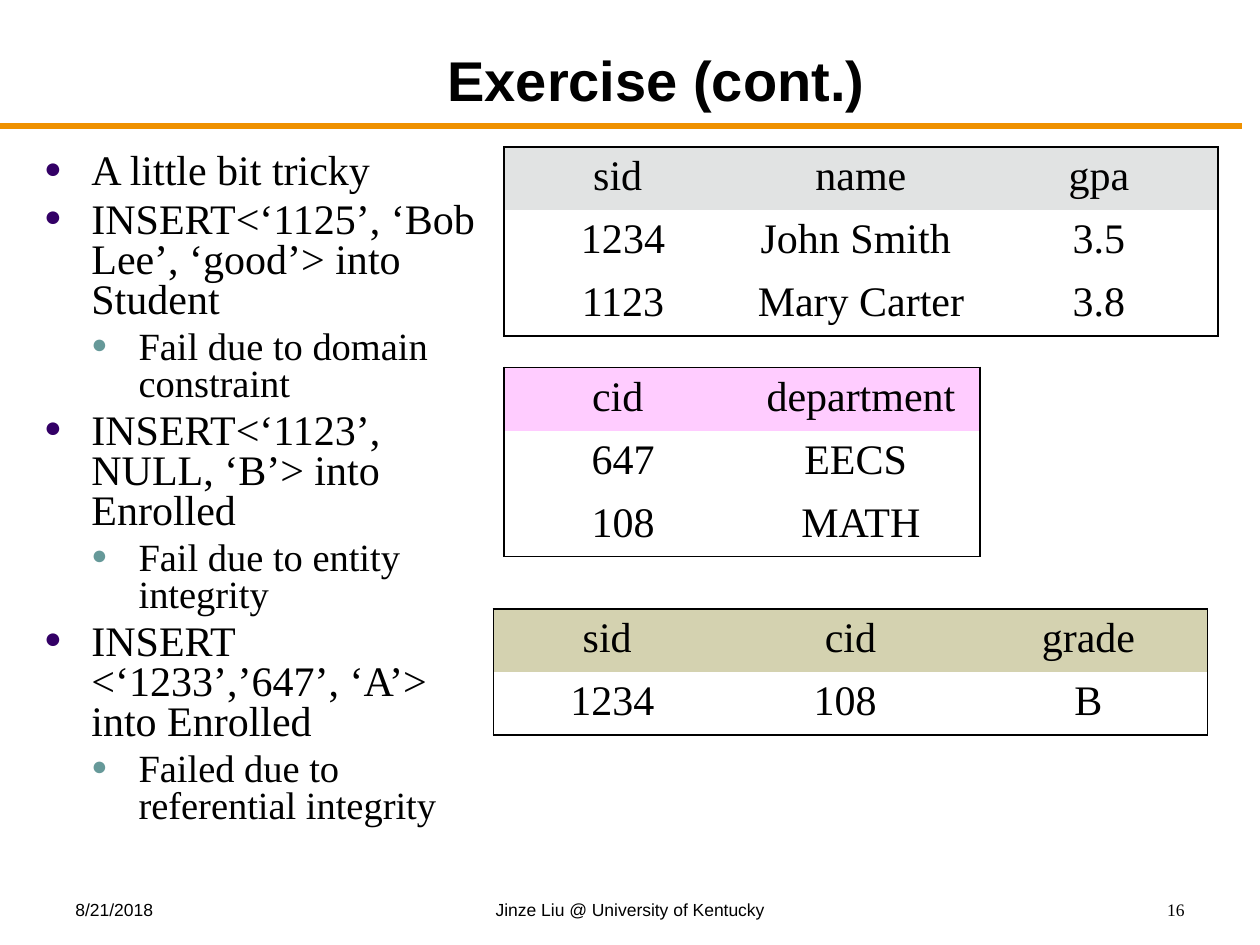
from typing import NamedTuple

from lxml import etree
from pptx import Presentation
from pptx import util as u
from pptx.dml.color import RGBColor
from pptx.enum import shapes, text
from pptx.oxml import ns

BLACK = RGBColor(0x00, 0x00, 0x00)
ORANGE = RGBColor(0xEF, 0x91, 0x00)
PURPLE = RGBColor(0x33, 0x00, 0x66)
TEAL = RGBColor(0x66, 0x99, 0x99)
GRAY = RGBColor(0xE1, 0xE3, 0xE3)
PINK = RGBColor(0xFF, 0xCC, 0xFF)
KHAKI = RGBColor(0xD4, 0xD2, 0xB0)
SANS, SERIF = "Arial", "Times New Roman"
COLUMN_WIDTH, ROW_HEIGHT, INDENT = 136, 30, 27
ALIGN = text.PP_ALIGN


class Level(NamedTuple):
    size: float
    bullet_color: RGBColor


class Relation(NamedTuple):
    left: float
    top: float
    header_color: RGBColor
    rows: list[tuple[str, ...]]


class Footer(NamedTuple):
    left: float
    width: float
    words: str
    font: str
    alignment: ALIGN


LEVELS = [Level(24, PURPLE), Level(22, TEAL)]
BULLETS = [
    (0, "A little bit tricky"),
    (0, "INSERT<‘1125’, ‘Bob Lee’, ‘good’> into Student"),
    (1, "Fail due to domain constraint"),
    (0, "INSERT<‘1123’, NULL, ‘B’> into Enrolled"),
    (1, "Fail due to entity integrity"),
    (0, "INSERT <‘1233’,’647’, ‘A’> into Enrolled"),
    (1, "Failed due to referential integrity"),
]
RELATIONS = [
    Relation(288, 84, GRAY, [("sid ", "name", "gpa"),
                             ("1234", "John Smith ", "3.5"),
                             ("1123", "Mary Carter ", "3.8")]),
    Relation(288, 210, PINK, [("cid ", "department"), ("647", "EECS "), ("108", "MATH")]),
    Relation(282, 348, KHAKI, [("sid ", "cid", "grade"), ("1234", "108 ", "B")]),
]
FOOTERS = [
    Footer(36, 168, "8/21/2018", SANS, ALIGN.LEFT),
    Footer(246, 228, "Jinze Liu @ University of Kentucky", SANS, ALIGN.CENTER),
    Footer(516, 168, "16", SERIF, ALIGN.RIGHT),
]


def add_run(paragraph, words: str, font: str, size: float, bold: bool = False) -> None:
    run = paragraph.add_run()
    run.text = words
    run.font.name = font
    run.font.size = u.Pt(size)
    run.font.bold = bold
    run.font.color.rgb = BLACK


def place(shape, left: float, top: float, width: float, height: float) -> None:
    shape.left, shape.top = u.Pt(left), u.Pt(top)
    shape.width, shape.height = u.Pt(width), u.Pt(height)


def add_element(parent, tag: str, **attributes: str):
    return etree.SubElement(parent, ns.qn(tag), attributes)


def fill_title(title) -> None:
    place(title, 78, 18, 594, 50)
    frame = title.text_frame
    frame.auto_size = text.MSO_AUTO_SIZE.NONE
    frame.vertical_anchor = text.MSO_ANCHOR.BOTTOM
    frame.paragraphs[0].alignment = ALIGN.CENTER
    add_run(frame.paragraphs[0], "Exercise (cont.)", SANS, 32, bold=True)


def add_bullet(paragraph, depth: int, words: str) -> None:
    level = LEVELS[depth]
    paragraph.level = depth
    paragraph.line_spacing = 0.8
    paragraph.space_before = u.Pt(level.size * 0.2)
    properties = paragraph._p.get_or_add_pPr()
    properties.set("marL", str(u.Pt(INDENT * (depth + 1))))
    properties.set("indent", str(u.Pt(-INDENT)))
    color = add_element(properties, "a:buClr")
    add_element(color, "a:srgbClr", val=str(level.bullet_color))
    add_element(properties, "a:buSzPct", val="70000")
    add_element(properties, "a:buFont", typeface=SERIF)
    add_element(properties, "a:buChar", char="●")
    add_run(paragraph, words, SERIF, level.size)


def fill_body(body) -> None:
    place(body, 18, 84, 264, 414)
    frame = body.text_frame
    frame.auto_size = text.MSO_AUTO_SIZE.NONE
    for index, (depth, words) in enumerate(BULLETS):
        paragraph = frame.add_paragraph() if index else frame.paragraphs[0]
        add_bullet(paragraph, depth, words)


def set_borders(cell, outer_edges: dict[str, bool]) -> None:
    """Draw the outer edges in black and clear the inner ones."""
    properties = cell._tc.get_or_add_tcPr()
    for tag, is_outer in outer_edges.items():
        line = add_element(properties, tag, w=str(u.Pt(1)))
        if is_outer:
            fill = add_element(line, "a:solidFill")
            add_element(fill, "a:srgbClr", val=str(BLACK))
        else:
            add_element(line, "a:noFill")


def add_relation(slide, relation: Relation) -> None:
    row_count, column_count = len(relation.rows), len(relation.rows[0])
    table = slide.shapes.add_table(
        row_count, column_count, u.Pt(relation.left), u.Pt(relation.top),
        u.Pt(COLUMN_WIDTH * column_count), u.Pt(ROW_HEIGHT * row_count)).table
    table.first_row = table.horz_banding = False
    for row, values in enumerate(relation.rows):
        for column, words in enumerate(values):
            cell = table.cell(row, column)
            set_borders(cell, {"a:lnL": column == 0, "a:lnR": column == column_count - 1,
                               "a:lnT": row == 0, "a:lnB": row == row_count - 1})
            if row == 0:
                cell.fill.solid()
                cell.fill.fore_color.rgb = relation.header_color
            else:
                cell.fill.background()
            paragraph = cell.text_frame.paragraphs[0]
            paragraph.alignment = ALIGN.CENTER
            add_run(paragraph, words, SERIF, 24)


def add_footer(slide, footer: Footer) -> None:
    box = slide.shapes.add_textbox(u.Pt(footer.left), u.Pt(510), u.Pt(footer.width), u.Pt(18))
    box.text_frame.word_wrap = True
    paragraph = box.text_frame.paragraphs[0]
    paragraph.alignment = footer.alignment
    add_run(paragraph, footer.words, footer.font, 10)


def add_rule(slide) -> None:
    rule = slide.shapes.add_connector(
        shapes.MSO_CONNECTOR.STRAIGHT, u.Pt(0), u.Pt(72), u.Pt(710), u.Pt(72))
    rule.line.color.rgb = ORANGE
    rule.line.width = u.Pt(3)
    add_element(rule._element.spPr, "a:effectLst")


def main() -> None:
    presentation = Presentation()
    presentation.slide_width, presentation.slide_height = u.Pt(720), u.Pt(540)
    slide = presentation.slides.add_slide(presentation.slide_layouts[1])
    add_rule(slide)
    fill_title(slide.shapes.title)
    fill_body(slide.placeholders[1])
    for footer in FOOTERS:
        add_footer(slide, footer)
    for relation in RELATIONS:
        add_relation(slide, relation)
    presentation.save("out.pptx")


if __name__ == "__main__":
    main()
